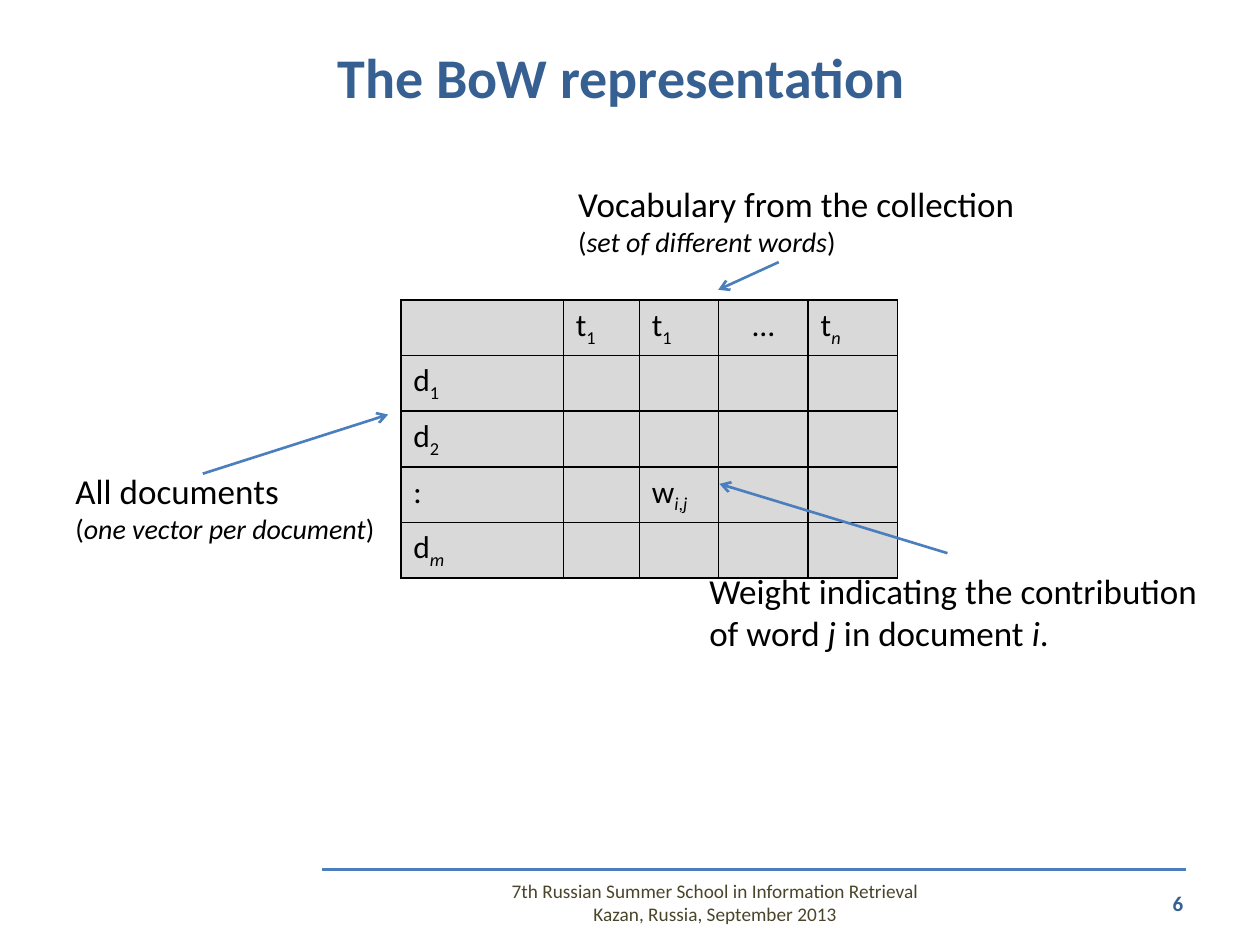
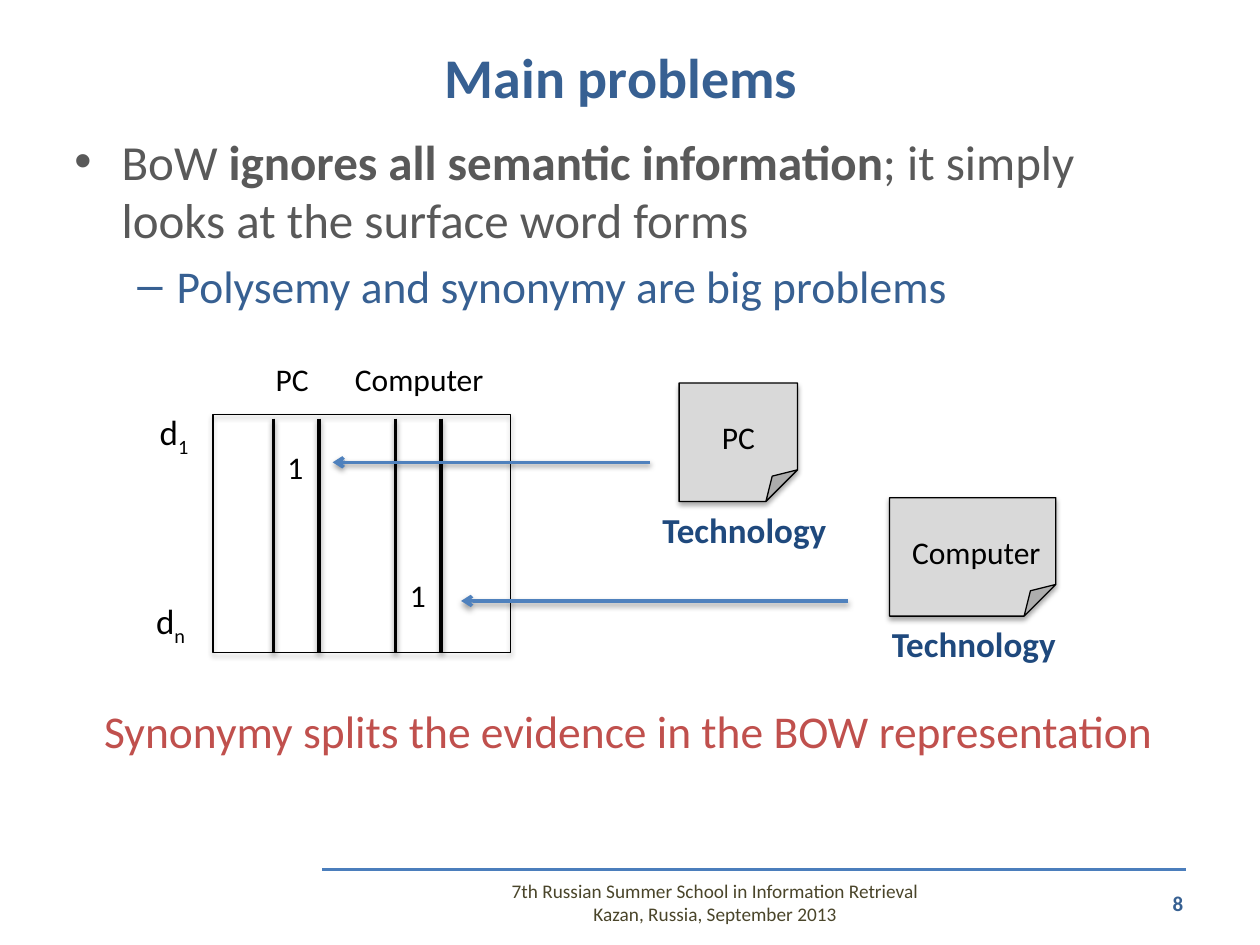
from lxml import etree
from pptx import Presentation
from pptx.dml.color import RGBColor
from pptx.enum.shapes import MSO_CONNECTOR, MSO_SHAPE
from pptx.enum.text import MSO_ANCHOR, MSO_AUTO_SIZE, PP_ALIGN
from pptx.oxml.ns import qn
from pptx.util import Pt

STRAIGHT = MSO_CONNECTOR.STRAIGHT
RECTANGLE, FOLDED_CORNER = MSO_SHAPE.RECTANGLE, MSO_SHAPE.FOLDED_CORNER
LEFT, CENTER, RIGHT = PP_ALIGN.LEFT, PP_ALIGN.CENTER, PP_ALIGN.RIGHT
TOP, MIDDLE = MSO_ANCHOR.TOP, MSO_ANCHOR.MIDDLE
NO_AUTOFIT = MSO_AUTO_SIZE.NONE

FONT = "Calibri"
COLORS = {
    "black": "000000",
    "heading": "376092",
    "body": "595959",
    "footer": "4A452A",
    "rule": "4B7EBC",
    "arrow": "4F81BD",
    "topic": "1F497D",
    "conclusion": "C0504D",
    "panel": "D9D9D9",
}
LAYOUT_CONTENT, LAYOUT_TITLE_ONLY = 1, 5
FOOTER_LINES = ["7th Russian Summer School in Information Retrieval",
                "Kazan, Russia, September 2013"]


def rgb(name):
    return RGBColor.from_string(COLORS[name])


def points(*values):
    return [Pt(value) for value in values]


# Text: a run is (text, style), where style may hold b(old), i(talic), s(ubscript)
def write_paragraph(paragraph, runs, size, color="black", bold=None, align=None):
    font = paragraph.font
    font.name, font.size, font.bold = FONT, Pt(size), bold
    font.color.rgb = rgb(color)
    if align is not None:
        paragraph.alignment = align
    for text, style in runs:
        run = paragraph.add_run()
        run.text = text
        if "b" in style:
            run.font.bold = True
        if "i" in style:
            run.font.italic = True
        if "s" in style:
            run.font._element.set("baseline", "-25000")


def add_label(slide, box, lines, anchor=TOP, **format_options):
    """Add a text box; each line is (size, runs)."""
    frame = slide.shapes.add_textbox(*points(*box)).text_frame
    frame.vertical_anchor = anchor
    for index, (size, runs) in enumerate(lines):
        paragraph = frame.add_paragraph() if index else frame.paragraphs[0]
        write_paragraph(paragraph, runs, size, **format_options)


def add_word(slide, box, text, size=18, **format_options):
    add_label(slide, box, [(size, [(text, "")])], **format_options)


# Lines and shapes
def add_shadow(effects, opacity, distance):
    shadow = etree.SubElement(effects, qn("a:outerShdw"), blurRad=str(Pt(3.1)),
                              dist=str(Pt(distance)), dir="5400000", rotWithShape="0")
    color = etree.SubElement(shadow, qn("a:srgbClr"), val=COLORS["black"])
    etree.SubElement(color, qn("a:alpha"), val=str(opacity * 1000))


def add_line(slide, start, end, color, width, arrow=False, shadow=False):
    connector = slide.shapes.add_connector(STRAIGHT, *points(*start, *end))
    connector.line.color.rgb = rgb(color)
    connector.line.width = Pt(width)
    properties = connector.element.spPr
    if arrow:
        etree.SubElement(properties.find(qn("a:ln")), qn("a:tailEnd"), type="arrow")
    effects = etree.SubElement(properties, qn("a:effectLst"))
    if shadow:
        add_shadow(effects, 38, 1.6)


def add_outlined_shape(slide, kind, box, fill=None):
    shape = slide.shapes.add_shape(kind, *points(*box))
    if fill:
        shape.fill.solid()
        shape.fill.fore_color.rgb = rgb(fill)
    else:
        shape.fill.background()
    shape.line.color.rgb = rgb("black")
    shape.line.width = Pt(0.75)
    shape.shadow.inherit = False
    add_shadow(shape.element.spPr.find(qn("a:effectLst")), 35, 1.8)
    return shape


# Parts that every slide shares
def place(placeholder, box, anchor):
    placeholder.left, placeholder.top, placeholder.width, placeholder.height = points(*box)
    frame = placeholder.text_frame
    frame.auto_size = NO_AUTOFIT
    frame.vertical_anchor = anchor
    return frame


def add_base_slide(presentation, layout, title, number):
    slide = presentation.slides.add_slide(presentation.slide_layouts[layout])
    frame = place(slide.shapes.title, (31, 16, 648, 55.5), MIDDLE)
    write_paragraph(frame.paragraphs[0], [(title, "")], 32, "heading", True, CENTER)
    add_line(slide, (184.3, 496.8), (677.5, 496.8), "rule", 1.5)
    add_label(slide, (275.8, 501.1, 265.7, 28.8), [(11, [(line, "")]) for line in FOOTER_LINES],
              MIDDLE, color="footer", align=CENTER)
    add_word(slide, (629.3, 501.8, 54, 28.8), str(number), 12, anchor=MIDDLE,
             color="heading", bold=True, align=RIGHT)
    return slide


# Table of term weights
def set_borders(cell):
    properties = cell._tc.get_or_add_tcPr()
    for index, side in enumerate(("a:lnL", "a:lnR", "a:lnT", "a:lnB")):
        border = etree.Element(qn(side), w=str(Pt(1)))
        fill = etree.SubElement(border, qn("a:solidFill"))
        etree.SubElement(fill, qn("a:srgbClr"), val=COLORS["black"])
        properties.insert(index, border)


def add_weight_table(slide):
    column_widths = [92.9, 43.4, 45.4, 51.1, 51.1]
    row_count, row_height = 5, 29.2
    entries = {
        (0, 1): [("t", ""), ("1", "s")],
        (0, 2): [("t", ""), ("1", "s")],
        (0, 3): [("…", "")],
        (0, 4): [("t", ""), ("n", "is")],
        (1, 0): [("d", ""), ("1", "s")],
        (2, 0): [("d", ""), ("2", "s")],
        (3, 0): [(":", "")],
        (3, 2): [("w", ""), ("i", "is"), (",", "s"), ("j", "is")],
        (4, 0): [("d", ""), ("m", "is")],
    }
    box = (229, 171.4, sum(column_widths), row_count * row_height)
    table = slide.shapes.add_table(row_count, len(column_widths), *points(*box)).table
    table.first_row = table.horz_banding = False
    for column, width in zip(table.columns, column_widths):
        column.width = Pt(width)
    for row in range(row_count):
        for column in range(len(column_widths)):
            cell = table.cell(row, column)
            cell.fill.solid()
            cell.fill.fore_color.rgb = rgb("panel")
            set_borders(cell)
            align = CENTER if (row, column) == (0, 3) else LEFT
            write_paragraph(cell.text_frame.paragraphs[0], entries.get((row, column), []),
                            18, align=align)


def build_representation_slide(presentation):
    slide = add_base_slide(presentation, LAYOUT_TITLE_ONLY, "The BoW representation", 6)
    add_weight_table(slide)

    # Callouts: box, lines, arrow start, arrow end
    callouts = [
        ((36, 265, 187.9, 51.1),
         [(20, [("All documents", "")]),
          (16, [("(", ""), ("one vector per document", "i"), (")", "")])],
         (115.9, 270.7), (221.8, 236.9)),
        ((398.2, 321.8, 295.9, 55.4),
         [(20, [("Weight indicating the contribution", "")]),
          (20, [("of word ", ""), ("j", "i"), (" in document ", ""), ("i", "i"), (".", "")])],
         (541.4, 316.1), (411.1, 276.5)),
        ((323.3, 100.8, 266.4, 51.1),
         [(20, [("Vocabulary from the collection", "")]),
          (16, [("(", ""), ("set of different words", "i"), (")", "")])],
         (445, 149.8), (410.4, 165.6)),
    ]
    for box, lines, start, end in callouts:
        add_label(slide, box, lines)
        add_line(slide, start, end, "rule", 1.5, arrow=True)


# Body list with the conclusion below the diagram
def fill_problem_list(slide):
    frame = place(slide.placeholders[1], (35.3, 71.3, 648, 396.7), TOP)
    write_paragraph(frame.paragraphs[0],
                    [("BoW ", ""), ("ignores all semantic information", "b"),
                     ("; it simply looks at the surface word forms", "")], 28, "body")
    detail = frame.add_paragraph()
    detail.level = 1
    write_paragraph(detail, [("Polysemy and synonymy are big problems", "")], 26, "heading")
    conclusion = frame.add_paragraph()
    conclusion.space_before = Pt(223)
    write_paragraph(conclusion, [("Synonymy splits the evidence in the BOW representation", "")],
                    26, "conclusion", align=CENTER)
    properties = conclusion._p.get_or_add_pPr()
    properties.set("marL", "0")
    properties.set("indent", "0")
    properties.find(qn("a:spcBef")).addnext(etree.Element(qn("a:buNone")))


def add_word_column(slide, name, name_left, name_width, divider_left, count_top):
    add_word(slide, (name_left, 202.3, name_width, 28.8), name)
    for left in (divider_left, divider_left + 26):
        add_line(slide, (left, 239.2), (left, 373.2), "black", 2, shadow=True)
    add_word(slide, (divider_left + 1, count_top, 23.8, 28.8), "1")


def add_document(slide, name, box, name_left, name_width, topic_left):
    note = add_outlined_shape(slide, FOLDED_CORNER, box, "panel")
    geometry = note.element.spPr.find(qn("a:prstGeom"))
    etree.SubElement(geometry.find(qn("a:avLst")), qn("a:gd"), name="adj", fmla="val 26700")
    top = box[1]
    add_word(slide, (name_left, top + 16.5, name_width, 28.8), name)
    add_word(slide, (topic_left, top + 68, 110.9, 31.7), "Technology", 20,
             color="topic", bold=True)


def build_problems_slide(presentation):
    slide = add_base_slide(presentation, LAYOUT_CONTENT, "Main problems", 8)
    fill_problem_list(slide)

    # Document matrix
    add_outlined_shape(slide, RECTANGLE, (121.7, 236.9, 169.9, 136.1))
    for left, top, index in ((84.2, 231.1, "1"), (82.1, 339.1, "n")):
        add_label(slide, (left, top, 32, 31.7), [(20, [("d", ""), (index, "s")])])
    add_word_column(slide, "PC", 150.5, 33.8, 156.2, 252.7)
    add_word_column(slide, "Computer", 195.8, 88.6, 226.1, 325.4)

    # Documents and the matrix cells they count towards
    add_document(slide, "PC", (388.1, 218.9, 67.7, 67.7), 405.4, 33.8, 371.5)
    add_document(slide, "Computer", (508.3, 284.4, 95, 67.7), 514.1, 88.6, 502.6)
    for start, end, top in ((371.5, 190.1, 264.2), (484.6, 263.5, 343.4)):
        add_line(slide, (start, top), (end, top), "arrow", 2, arrow=True, shadow=True)


def main():
    presentation = Presentation()
    presentation.slide_width, presentation.slide_height = points(720, 540)
    build_representation_slide(presentation)
    build_problems_slide(presentation)
    presentation.save("out.pptx")


if __name__ == "__main__":
    main()
